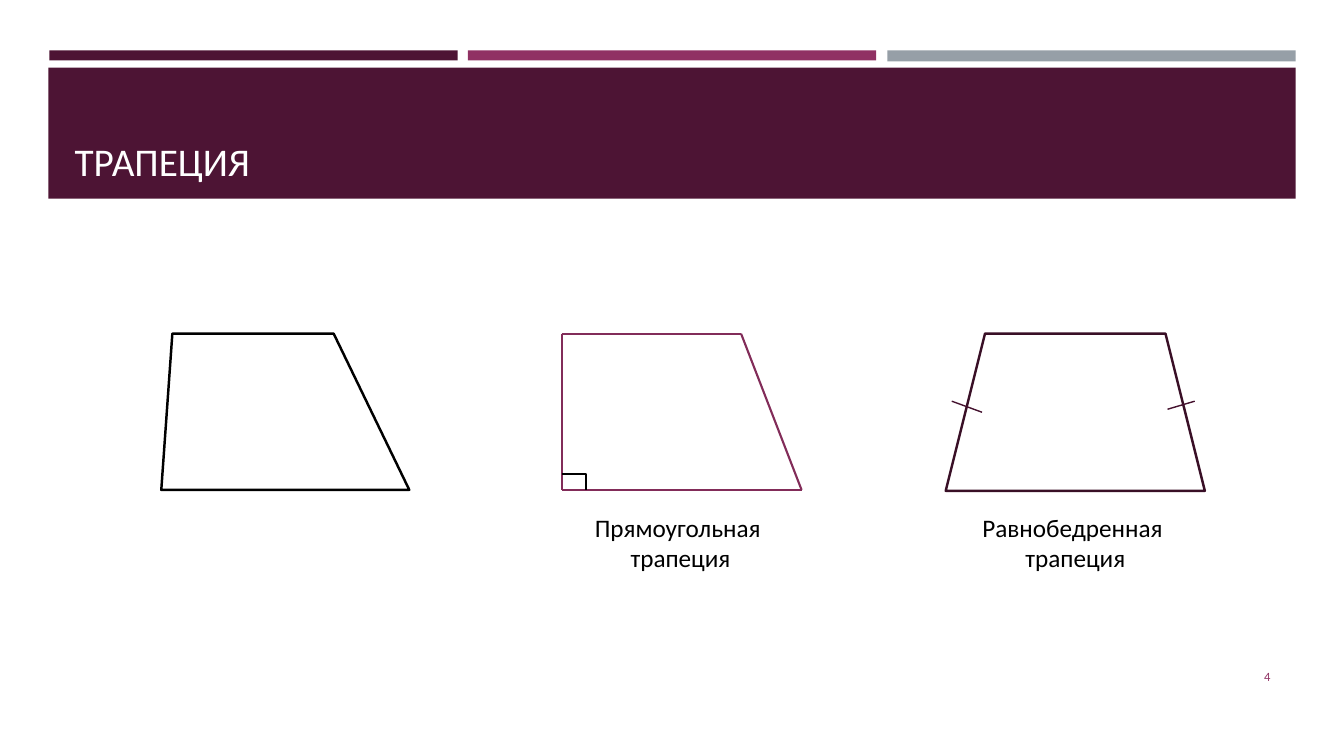
"""Build a slide that shows three kinds of trapezoid."""
import lxml.etree
import pptx
import pptx.dml.color
import pptx.enum.shapes
import pptx.enum.text
import pptx.oxml.ns
import pptx.util

Inches = pptx.util.Inches
Pt = pptx.util.Pt
ALIGN = pptx.enum.text.PP_ALIGN
ANCHOR = pptx.enum.text.MSO_ANCHOR
SHAPE = pptx.enum.shapes.MSO_SHAPE
CONNECTOR = pptx.enum.shapes.MSO_CONNECTOR
TOP, BASE = 3.31, 4.86


def paint(color_format, value):
    color_format.rgb = pptx.dml.color.RGBColor.from_string(value)


def draw_line(kind, start, end, color, width):
    connector = slide.shapes.add_connector(
        kind, *[Inches(value) for value in (*start, *end)])
    paint(connector.line.color, color)
    connector.line.width = Pt(width)
    lxml.etree.SubElement(
        connector.element.spPr, pptx.oxml.ns.qn("a:effectLst"))
    return connector


presentation = pptx.Presentation()
presentation.slide_width = Inches(13.33)
presentation.slide_height = Inches(7.5)
slide = presentation.slides.add_slide(presentation.slide_layouts[5])

for left, top, width, height, color in [
    (0.49, 0.5, 4.05, 0.1, "4D1434"),
    (4.64, 0.5, 4.05, 0.1, "903163"),
    (8.8, 0.5, 4.05, 0.11, "969FA7"),
    (0.48, 0.67, 12.37, 1.3, "4D1434"),
]:
    band = slide.shapes.add_shape(
        SHAPE.RECTANGLE, Inches(left), Inches(top), Inches(width), Inches(height))
    band.shadow.inherit = False
    band.fill.solid()
    paint(band.fill.fore_color, color)
    band.line.fill.background()

title = slide.shapes.title
band.element.addnext(title.element)
title.left, title.top = Inches(0.64), Inches(0.77)
title.width, title.height = Inches(12.06), Inches(1.11)
title.text_frame.text = "ТРАПЕЦИЯ"
title.text_frame.vertical_anchor = ANCHOR.BOTTOM
paragraph = title.text_frame.paragraphs[0]
paragraph.alignment = ALIGN.LEFT
paragraph.font.name = "Calibri"
paragraph.font.size = Pt(28)
paint(paragraph.font.color, "FFFFFF")

isosceles = slide.shapes.add_shape(
    SHAPE.TRAPEZOID, Inches(9.38), Inches(TOP), Inches(2.57), Inches(1.56))
builder = slide.shapes.build_freeform(Inches(1.6), Inches(BASE))
builder.add_line_segments(
    [(Inches(x), Inches(y)) for x, y in [(1.71, TOP), (3.31, TOP), (4.06, BASE)]])
general = builder.convert_to_shape()
for trapezoid, color in [(isosceles, "390F26"), (general, "000000")]:
    trapezoid.shadow.inherit = False
    trapezoid.fill.solid()
    paint(trapezoid.fill.fore_color, "FFFFFF")
    paint(trapezoid.line.color, color)
    trapezoid.line.width = Pt(1.75)

corners = [(5.57, BASE), (5.57, TOP), (7.35, TOP), (7.95, BASE)]
for index, corner in enumerate(corners):
    draw_line(CONNECTOR.STRAIGHT, corners[index - 1], corner, "822C59", 1.5)

right_angle = draw_line(CONNECTOR.ELBOW, (5.57, 4.7), (5.81, BASE), "000000", 1.5)
adjustments = right_angle.element.xpath(".//a:avLst")[0]
lxml.etree.SubElement(
    adjustments, pptx.oxml.ns.qn("a:gd"), name="adj1", fmla="val 100000")

for start, end in [((9.44, 3.98), (9.74, 4.09)), ((11.58, 4.06), (11.85, 3.98))]:
    draw_line(CONNECTOR.STRAIGHT, start, end, "45122F", 1)

for text, left, top, width, height, size, color, alignment, anchor in [
    ("Прямоугольная \nтрапеция", 5.77, 5.03, 1.96, 0.71, 18, "000000",
     ALIGN.CENTER, ANCHOR.TOP),
    ("Равнобедренная \nтрапеция", 9.59, 5.03, 2.15, 0.71, 18, "000000",
     ALIGN.CENTER, ANCHOR.TOP),
    ("4", 11.55, 6.51, 1.15, 0.4, 9, "903163", ALIGN.RIGHT, ANCHOR.MIDDLE),
]:
    label = slide.shapes.add_textbox(
        Inches(left), Inches(top), Inches(width), Inches(height))
    label.text_frame.text = text
    label.text_frame.vertical_anchor = anchor
    for paragraph in label.text_frame.paragraphs:
        paragraph.alignment = alignment
        paragraph.font.name = "Calibri"
        paragraph.font.size = Pt(size)
        paint(paragraph.font.color, color)

presentation.save("out.pptx")
